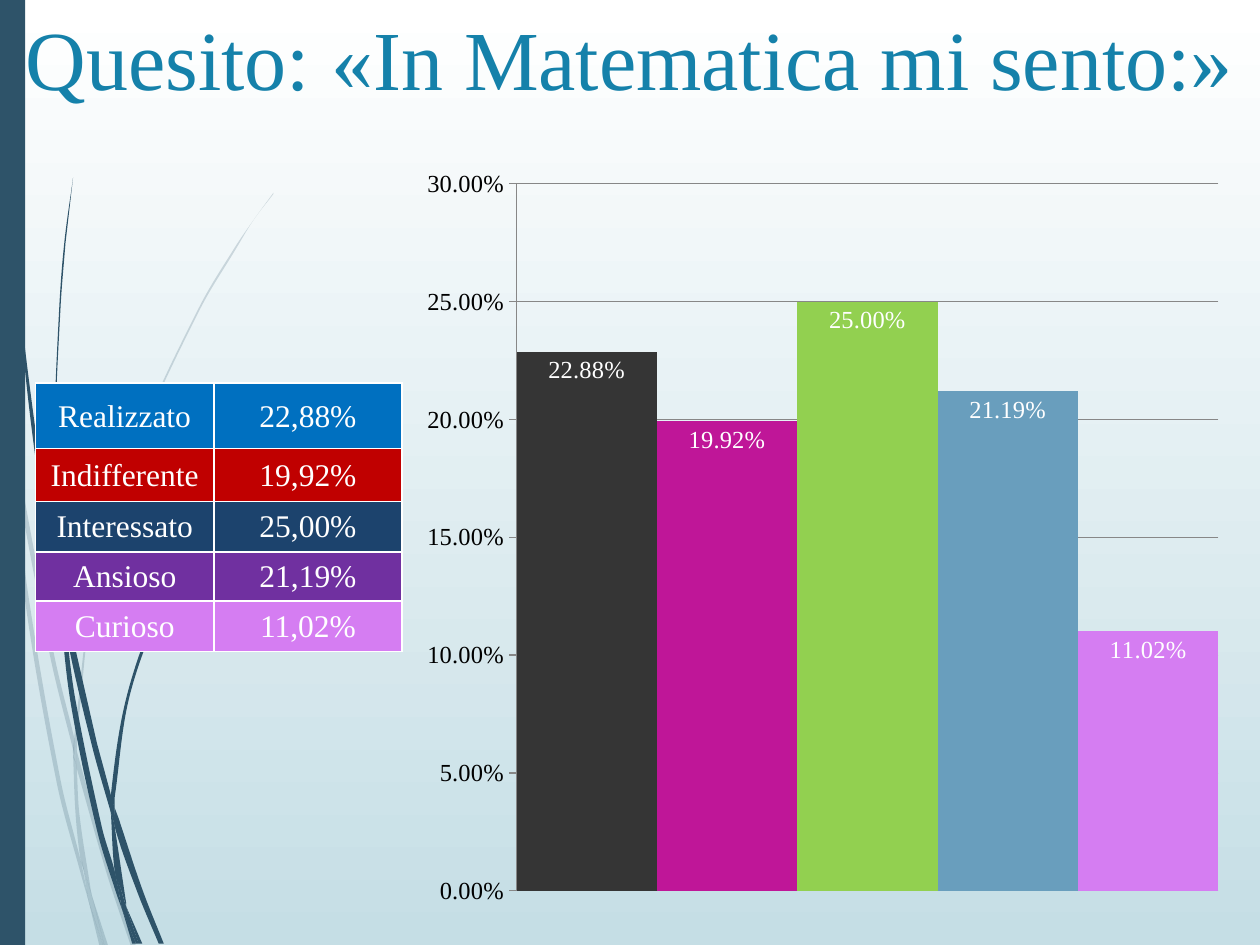
from math import dist
from typing import NamedTuple

from lxml import etree
from pptx import Presentation
from pptx import util as u
from pptx.chart.data import CategoryChartData
from pptx.dml.color import RGBColor
from pptx.enum import chart as ch
from pptx.enum import shapes as sh
from pptx.enum import text as t
from pptx.oxml import parse_xml
from pptx.oxml.ns import nsdecls, qn

FONT = "Times New Roman"
PCT = "0.00%"
HUES = {"teal": "2E5369", "title": "1581AA", "white": "FFFFFF", "mist": "C5DEE5",
        "black": "000000", "grey": "878787"}


class Blade(NamedTuple):
    """A piece of grass: points down one edge, then back up the other."""
    down: list
    up: list


class Mood(NamedTuple):
    name: str
    share: float
    cell: str
    bar: str


MOODS = [
    Mood("Realizzato", 0.2288, "0070C0", "353535"),
    Mood("Indifferente", 0.1992, "C00000", "BF1698"),
    Mood("Interessato", 0.25, "1C436D", "92D050"),
    Mood("Ansioso", 0.2119, "7030A0", "699EBD"),
    Mood("Curioso", 0.1102, "D57DF2", "D57DF2"),
]

PALE = [
    Blade([(0, 2.99), (.07, 3.44), (.08, 3.5)], [(.06, 3.22), (0, 2.82)]),
    Blade([(.12, 3.76), (.4, 5.22), (.59, 5.99)], [(.59, 5.86), (.43, 5.2), (.1, 3.45)]),
    Blade([(.61, 6.1), (.85, 6.94), (1.04, 7.51)],
          [(1.08, 7.51), (.88, 6.92), (.64, 6.07), (.61, 5.96)]),
    Blade([(.73, 7.11), (.83, 7.51)], [(.86, 7.51)]),
    Blade([(.08, 3.5), (.19, 4.7), (.45, 6.21), (.64, 6.93), (.7, 7.14)],
          [(.69, 7.07), (.64, 6.83), (.48, 6.19), (.22, 4.69), (.12, 3.76)]),
    Blade([(.58, 5.99), (.6, 6.46), (.64, 6.83), (.67, 6.92), (.73, 7.11)],
          [(.72, 7.06), (.63, 6.46), (.61, 6.1), (.61, 6.08)]),
    Blade([(2.17, 1.53), (2.01, 1.75), (1.86, 1.97), (1.58, 2.44), (1.1, 3.48),
           (.75, 4.61), (.59, 5.84), (.59, 5.86), (.61, 5.96)],
          [(.61, 5.84), (.76, 4.62), (1.11, 3.49), (1.59, 2.45), (1.87, 1.98),
           (2.01, 1.75), (2.17, 1.54)]),
    Blade([(.7, 7.14), (.79, 7.51)], [(.82, 7.51)]),
    Blade([(.59, 5.86), (.58, 5.99), (.61, 6.08), (.61, 6.1)], [(.61, 5.96)]),
    Blade([(.65, 6.83), (.69, 7.07), (.7, 7.14), (.82, 7.51)],
          [(.83, 7.51), (.73, 7.11), (.67, 6.92)]),
]

DARK = [
    Blade([(.02, 0), (.03, .48), (.05, 1.1), (.14, 2.33), (.27, 3.55), (.46, 4.77), (.47, 4.81)],
          [(.45, 4.57), (.45, 4.53), (.3, 3.55), (.15, 2.32), (.06, 1.09), (.04, .48), (.03, 0)]),
    Blade([(.5, 4.72), (.53, 5.05), (.73, 5.92), (.88, 6.45)],
          [(.88, 6.33), (.88, 6.31), (.77, 5.9)]),
    Blade([(.91, 6.41), (.91, 6.56), (1.09, 7.08), (1.26, 7.49)],
          [(1.3, 7.49), (1.13, 7.06), (.94, 6.49)]),
    Blade([(.47, 4.77), (.56, 5.57), (.77, 6.59), (.92, 7.08), (.97, 7.22)],
          [(.96, 7.17), (.91, 6.91), (.81, 6.57), (.6, 5.56), (.53, 5.05)]),
    Blade([(.58, 1.41), (.51, 1.93), (.47, 2.45), (.43, 3.49), (.45, 4.49), (.49, 4.72)],
          [(.5, 4.72), (.48, 4.53), (.44, 3.49), (.48, 2.45), (.52, 1.93)]),
    Blade([(1, 7.19), (1.1, 7.49)], [(1.13, 7.49)]),
    Blade([(.45, 4.49), (.45, 4.53), (.47, 4.77), (.53, 5.05)], [(.5, 4.72), (.49, 4.72)]),
    Blade([(2.15, 3.44), (2.03, 3.58), (1.91, 3.73), (1.68, 4.05), (1.29, 4.74),
           (1.01, 5.51), (.88, 6.31), (.91, 6.41)],
          [(.91, 6.33), (1.03, 5.52), (1.31, 4.76), (1.69, 4.06), (1.91, 3.74),
           (2.03, 3.59), (2.16, 3.44)]),
    Blade([(.97, 7.22), (1.05, 7.49)], [(1.08, 7.49)]),
    Blade([(.88, 6.45), (.91, 6.91), (.96, 7.06), (1, 7.19)], [(1, 7.16), (.91, 6.56), (.9, 6.51)]),
    Blade([(.88, 6.31), (.88, 6.45), (.9, 6.51), (.91, 6.56)], [(.91, 6.41)]),
    Blade([(.91, 6.91), (.96, 7.17), (.97, 7.22), (1.08, 7.49)],
          [(1.1, 7.49), (1, 7.19), (.96, 7.06)]),
]


def rgb(hue: str) -> RGBColor:
    return RGBColor.from_string(HUES.get(hue, hue))


def style(font, size: float, hue: str, name: str = FONT) -> None:
    font.size, font.name = u.Pt(size), name
    font.color.rgb = rgb(hue)


def paint(shape, hue: str) -> None:
    shape.fill.solid()
    shape.fill.fore_color.rgb = rgb(hue)
    shape.line.fill.background()
    shape.shadow.inherit = False


def handles(edge: list) -> list:
    """Two Bezier handles for each step along an edge."""
    ends = [edge[0], *edge, edge[-1]]

    def lean(at, prev, post, reach):
        span = dist(prev, post) or 1
        return tuple(a + (q - p) / span * reach for a, p, q in zip(at, prev, post))

    return [(lean(b, a, c, dist(b, c) / 3), lean(c, d, b, dist(b, c) / 3))
            for a, b, c, d in zip(ends, ends[1:], ends[2:], ends[3:])]


def bend(shape, blade: Blade) -> None:
    """Turn the straight sides of a blade into curves."""
    left, top = (min(axis) for axis in zip(*blade.down, *blade.up))
    tip = (blade.down[-1], blade.up[0])
    pairs = handles(blade.down) + [tip] + handles(blade.up)
    for side, pair in zip(list(shape.element.iter(qn("a:lnTo"))), pairs):
        side.tag = qn("a:cubicBezTo")
        for k, (x, y) in enumerate(pair):
            spot = etree.Element(qn("a:pt"), x=str(u.Inches(x - left)), y=str(u.Inches(y - top)))
            side.insert(k, spot)


def grass(slide, blades: list, alpha: int) -> None:
    group = slide.shapes.add_group_shape()
    for blade in blades:
        pts = [(u.Inches(x), u.Inches(y)) for x, y in blade.down + blade.up]
        pen = group.shapes.build_freeform(*pts[0])
        pen.add_line_segments(pts[1:], close=True)
        shape = pen.convert_to_shape()
        bend(shape, blade)
        paint(shape, "teal")
        if alpha < 100:
            hue = next(shape.element.iter(qn("a:srgbClr")))
            etree.SubElement(hue, qn("a:alpha")).set("val", str(alpha * 1000))


def rule(cell) -> None:
    props = cell._tc.get_or_add_tcPr()
    for k, side in enumerate(("lnL", "lnR", "lnT", "lnB")):
        props.insert(k, parse_xml(
            f'<a:{side} {nsdecls("a")} w="12700"><a:solidFill>'
            f'<a:srgbClr val="{HUES["white"]}"/></a:solidFill></a:{side}>'))


def add_table(slide) -> None:
    table = slide.shapes.add_table(len(MOODS), 2, u.Inches(.28), u.Inches(3.04),
                                   u.Inches(2.91), u.Inches(2.13)).table
    table.first_row = table.horz_banding = False
    for col, wide in zip(table.columns, (1.42, 1.49)):
        col.width = u.Inches(wide)
    for row, mood, high in zip(table.rows, MOODS, (.52, .42, .4, .39, .4)):
        row.height = u.Inches(high)
        for cell, words in zip(row.cells, (mood.name, f"{mood.share:.2%}".replace(".", ","))):
            cell.text = words
            cell.vertical_anchor = t.MSO_ANCHOR.MIDDLE
            cell.margin_left = cell.margin_right = cell.margin_top = u.Inches(.01)
            cell.margin_bottom = 0
            cell.fill.solid()
            cell.fill.fore_color.rgb = rgb(mood.cell)
            para = cell.text_frame.paragraphs[0]
            para.alignment = t.PP_ALIGN.CENTER
            style(para.font, 18, "white")
            rule(cell)


def add_chart(slide) -> None:
    wide, high = 6.54, 6.07
    data = CategoryChartData(number_format=PCT)
    data.categories = [str(k + 1) for k in range(len(MOODS))]
    data.add_series("Series 1", [m.share for m in MOODS])
    chart = slide.shapes.add_chart(ch.XL_CHART_TYPE.COLUMN_CLUSTERED, u.Inches(3.27),
                                   u.Inches(1.23), u.Inches(wide), u.Inches(high), data).chart
    chart.has_legend = chart.has_title = False
    style(chart.font, 10, "black", "League Spartan")
    chart.category_axis.visible = False

    # Value axis
    axis = chart.value_axis
    axis.minimum_scale, axis.maximum_scale, axis.major_unit = 0, .3, .05
    axis.major_tick_mark = ch.XL_TICK_MARK.OUTSIDE
    axis.tick_labels.number_format = PCT
    axis.tick_labels.number_format_is_linked = False
    style(axis.tick_labels.font, 14, "black")
    for line in (axis.format.line, axis.major_gridlines.format.line):
        line.color.rgb = rgb("grey")
        line.width = u.Pt(.75)

    # Bars and labels
    plot = chart.plots[0]
    plot.gap_width, plot.vary_by_categories = 0, False
    bars = plot.series[0]
    fills = [bars.format.fill] + [bars.points[k].format.fill for k in range(1, len(MOODS))]
    for fill, mood in zip(fills, MOODS):
        fill.solid()
        fill.fore_color.rgb = rgb(mood.bar)
    labels = bars.data_labels
    labels.show_value = True
    labels.number_format, labels.number_format_is_linked = PCT, False
    labels.position = ch.XL_LABEL_POSITION.INSIDE_END
    style(labels.font, 14, "white")

    # Inner plot area, as shares of the chart
    area = chart.element.find(".//" + qn("c:plotArea"))
    for old in area.findall(qn("c:layout")):
        area.remove(old)
    spots = "".join(f'<c:{tag} val="{val}"/>' for tag, val in (
        ("layoutTarget", "inner"), ("xMode", "edge"), ("yMode", "edge"),
        ("x", .83 / wide), ("y", .23 / high), ("w", 5.57 / wide), ("h", 5.61 / high)))
    area.insert(0, parse_xml(f'<c:layout {nsdecls("c")}><c:manualLayout>{spots}'
                             '</c:manualLayout></c:layout>'))


def main() -> None:
    deck = Presentation()
    deck.slide_width, deck.slide_height = u.Inches(10), u.Inches(7.5)
    slide = deck.slides.add_slide(deck.slide_layouts[5])

    # Background, grass and side bar
    back = slide.background.fill
    back.gradient()
    back.gradient_angle = 270
    for stop, hue in zip(back.gradient_stops, ("white", "mist")):
        stop.color.rgb = rgb(hue)
    grass(slide, PALE, 20)
    grass(slide, DARK, 100)
    bar = slide.shapes.add_shape(sh.MSO_SHAPE.RECTANGLE, 0, 0, u.Inches(.2), u.Inches(7.5))
    paint(bar, "teal")

    # Title, above the decoration
    title = slide.shapes.title
    slide.shapes.element.append(title.element)
    title.left, title.top, title.width, title.height = 0, 0, u.Inches(10), u.Inches(1.25)
    frame = title.text_frame
    frame.text = "Quesito: «In Matematica mi sento:»"
    frame.vertical_anchor = t.MSO_ANCHOR.TOP
    frame.margin_top = u.Inches(.05)
    frame.paragraphs[0].alignment = t.PP_ALIGN.CENTER
    style(frame.paragraphs[0].font, 48, "title")

    add_table(slide)
    add_chart(slide)
    deck.save("out.pptx")


if __name__ == "__main__":
    main()
